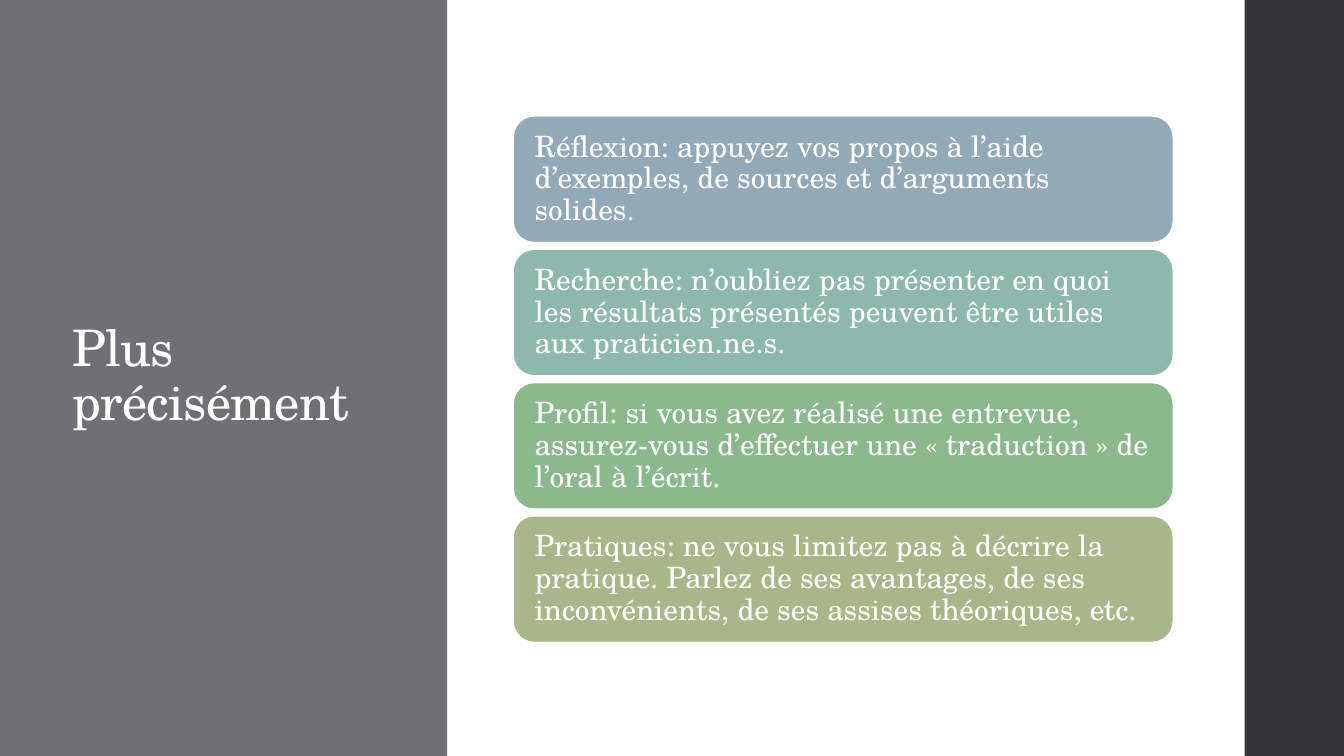
from pptx import Presentation
from pptx.dml.color import RGBColor
from pptx.enum import shapes, text
from pptx.util import Pt

FONT = "TeX Gyre Schola"
COLORS = {"panel": "6F6F74", "band": "353537", "white": "FFFFFF"}
TITLE = "Plus précisément"
TIPS = [
    ("Réflexion: appuyez vos propos à l’aide d’exemples, de sources et d’arguments solides.", "92A9B9"),
    ("Recherche: n’oubliez pas présenter en quoi les résultats présentés peuvent être utiles aux praticien.ne.s.", "8FB8AD"),
    ("Profil: si vous avez réalisé une entrevue, assurez-vous d’effectuer une « traduction » de l’oral à l’écrit.", "8CB88E"),
    ("Pratiques: ne vous limitez pas à décrire la pratique. Parlez de ses avantages, de ses inconvénients, de ses assises théoriques, etc.", "A7B789"),
]
WIDTH, HEIGHT = 960, 540
PANEL_W, BAND_X = 319.5, 889
TIP_X, TIP_Y, TIP_W, TIP_H, TIP_GAP = 366.5, 82.8, 471.6, 90.5, 4.7
TITLE_FRAME = {"margin_left": Pt(7.2), "margin_right": Pt(7.2)}
TIP_FRAME = {"margin_left": Pt(11), "margin_right": Pt(11),
             "margin_top": Pt(11), "margin_bottom": Pt(11)}


def add_block(slide, kind, box, fill, line=None):
    sp = slide.shapes.add_shape(kind, *map(Pt, box))
    sp.shadow.inherit = False
    sp.fill.solid()
    sp.fill.fore_color.rgb = RGBColor.from_string(fill)
    if line:
        sp.line.color.rgb = RGBColor.from_string(line)
        sp.line.width = Pt(1.1)
    else:
        sp.line.fill.background()
    return sp


def write(sp, words, size, frame):
    tf = sp.text_frame
    common = {"word_wrap": True, "vertical_anchor": text.MSO_ANCHOR.MIDDLE}
    for name, value in {**common, **frame}.items():
        setattr(tf, name, value)
    p = tf.paragraphs[0]
    p.alignment = text.PP_ALIGN.LEFT
    p.line_spacing = 0.9
    r = p.add_run()
    r.text = words
    for name, value in {"name": FONT, "size": Pt(size)}.items():
        setattr(r.font, name, value)
    r.font.color.rgb = RGBColor.from_string(COLORS["white"])
    return r


def main():
    prs = Presentation()
    prs.slide_width, prs.slide_height = Pt(WIDTH), Pt(HEIGHT)
    slide = prs.slides.add_slide(prs.slide_layouts[6])
    rect = shapes.MSO_SHAPE.RECTANGLE
    rounded = shapes.MSO_SHAPE.ROUNDED_RECTANGLE

    add_block(slide, rect, (0, 0, PANEL_W, HEIGHT), COLORS["panel"])
    add_block(slide, rect, (BAND_X, 0, WIDTH - BAND_X, HEIGHT), COLORS["band"])

    title = slide.shapes.add_textbox(Pt(44.6), Pt(65.5), Pt(214), Pt(408))
    r = write(title, TITLE, 36, TITLE_FRAME)
    r.font._element.set("spc", "-50")

    for i, (words, fill) in enumerate(TIPS):
        top = TIP_Y + i * (TIP_H + TIP_GAP)
        tip = add_block(slide, rounded, (TIP_X, top, TIP_W, TIP_H), fill, COLORS["white"])
        write(tip, words, 21, TIP_FRAME)

    prs.save("out.pptx")


if __name__ == "__main__":
    main()
